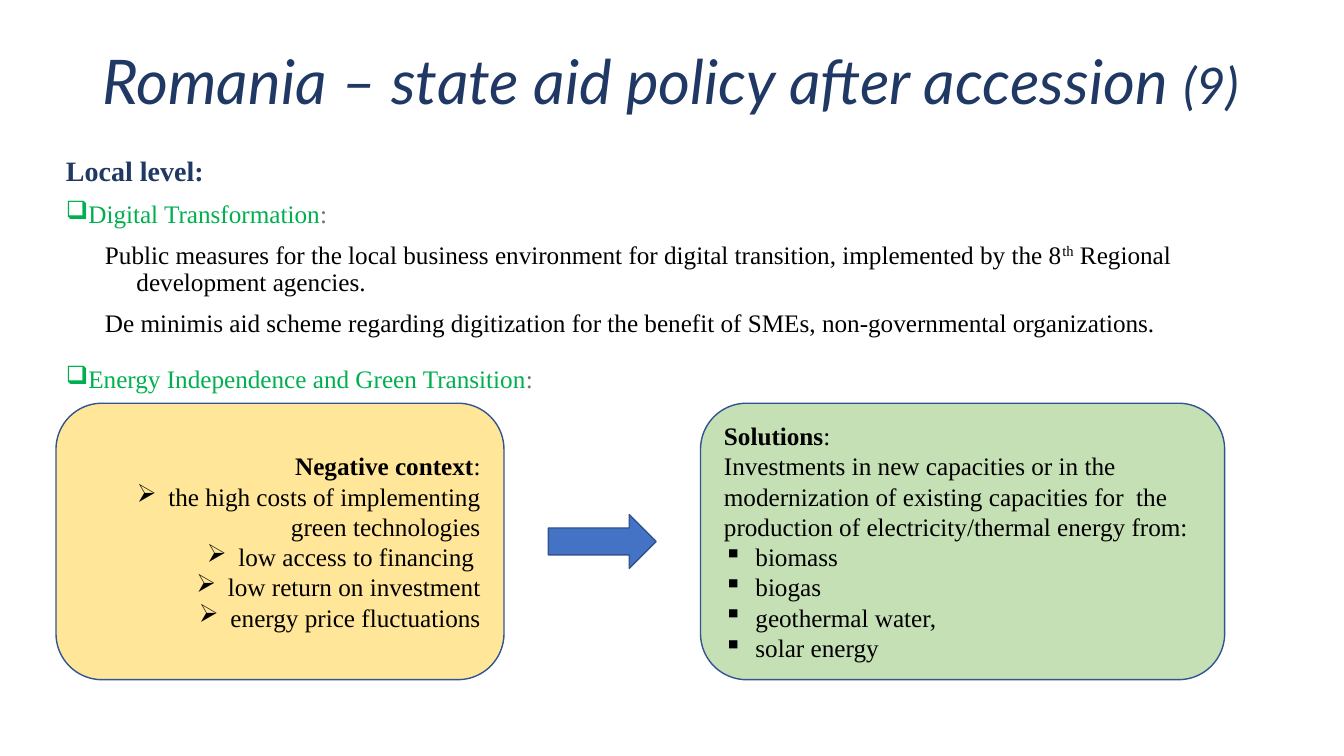
from dataclasses import dataclass

from lxml import etree
from pptx import Presentation
from pptx.dml.color import RGBColor
from pptx.enum.shapes import MSO_SHAPE
from pptx.enum.text import MSO_ANCHOR, MSO_AUTO_SIZE, PP_ALIGN
from pptx.oxml.ns import qn
from pptx.util import Pt

ROUNDED = MSO_SHAPE.ROUNDED_RECTANGLE
RIGHT_ARROW = MSO_SHAPE.RIGHT_ARROW
MIDDLE = MSO_ANCHOR.MIDDLE
LEFT, RIGHT = PP_ALIGN.LEFT, PP_ALIGN.RIGHT
NO_AUTOFIT = MSO_AUTO_SIZE.NONE
TITLE_ONLY = 5


@dataclass(frozen=True)
class Theme:
    title_font: str = "Lato"
    body_font: str = "Times New Roman"
    title_size: int = 44
    number_size: int = 36
    heading_size: int = 20
    body_size: int = 18
    navy: str = "203864"
    green: str = "00B050"
    grey: str = "767171"
    black: str = "000000"
    context_fill: str = "FFE699"
    solutions_fill: str = "C5E0B4"
    arrow_fill: str = "4472C4"
    outline: str = "325491"


THEME = Theme()
HANGING = 22.5
BODY = {"name": THEME.body_font, "size": THEME.body_size, "color": THEME.black}
BOLD = {"bold": True}
GREEN = {"color": THEME.green}
GREY = {"color": THEME.grey}
MEASURE = {"indent": 50.4, "hanging": HANGING}

LOCAL_LEVEL = [
    ([("Local level:", {"size": THEME.heading_size, "color": THEME.navy, "bold": True})],
     {"space_before": 0}),
    ([("Digital Transformation", GREEN), (":", GREY)], {"bullet": "❑"}),
    ([("Public measures for the local business environment for digital transition, "
       "implemented by the 8", {}),
      ("th", {"superscript": True}),
      (" Regional development agencies.", {})], MEASURE),
    ([("De minimis aid scheme regarding digitization for the benefit of SMEs, "
       "non-governmental organizations.", {})], MEASURE),
    ([("Energy Independence and Green Transition", GREEN), (":", GREY)],
     {"bullet": "❑", "space_before": 20}),
]
NEGATIVE_CONTEXT = [
    "the high costs of implementing green technologies",
    "low access to financing ",
    "low return on investment",
    "energy price fluctuations",
]
INVESTMENTS = ("Investments in new capacities or in the modernization of existing capacities "
               "for  the production of electricity/thermal energy from:")
ENERGY_SOURCES = ["biomass", "biogas", "geothermal water,", "solar energy"]


def add_run(paragraph, text, style):
    run = paragraph.add_run()
    run.text = text
    for attribute, value in style.items():
        if attribute == "color":
            run.font.color.rgb = RGBColor.from_string(value)
        elif attribute == "superscript":
            run._r.get_or_add_rPr().set("baseline", "30000")
        else:
            setattr(run.font, attribute, Pt(value) if attribute == "size" else value)


def format_paragraph(paragraph, bullet=None, indent=0, hanging=0, **settings):
    properties = paragraph._p.get_or_add_pPr()
    properties.set("marL", str(Pt(indent)))
    properties.set("indent", str(-Pt(hanging)))
    if bullet:
        etree.SubElement(properties, qn("a:buChar"), char=bullet)
    else:
        etree.SubElement(properties, qn("a:buNone"))
    for attribute, value in settings.items():
        setattr(paragraph, attribute, Pt(value) if attribute == "space_before" else value)


def write_paragraphs(frame, paragraphs, **common):
    """Fill the frame with (runs, settings) pairs that share the common settings."""
    frame.word_wrap = True
    for index, (runs, settings) in enumerate(paragraphs):
        paragraph = frame.paragraphs[0] if index == 0 else frame.add_paragraph()
        format_paragraph(paragraph, **{**common, **settings})
        for text, style in runs:
            add_run(paragraph, text, {**BODY, **style})


def add_outlined(slide, preset, fill, left, top, width, height):
    shape = slide.shapes.add_shape(preset, Pt(left), Pt(top), Pt(width), Pt(height))
    shape.shadow.inherit = False
    shape.fill.solid()
    shape.fill.fore_color.rgb = RGBColor.from_string(fill)
    shape.line.color.rgb = RGBColor.from_string(THEME.outline)
    shape.line.width = Pt(1)
    return shape


def place_title(slide, left, top, width, height):
    title = slide.shapes.title
    title.left, title.top, title.width, title.height = map(Pt, (left, top, width, height))
    frame = title.text_frame
    frame.auto_size = NO_AUTOFIT
    frame.vertical_anchor = MIDDLE
    heading = {"name": THEME.title_font, "size": THEME.title_size,
               "color": THEME.navy, "italic": True}
    write_paragraphs(frame, [([
        ("Romania – state aid policy after accession ", heading),
        ("(9)", {**heading, "size": THEME.number_size}),
    ], {})], alignment=LEFT, line_spacing=0.9, space_before=0)


def add_local_level(slide, left, top, width, height):
    box = slide.shapes.add_textbox(Pt(left), Pt(top), Pt(width), Pt(height))
    write_paragraphs(box.text_frame, LOCAL_LEVEL, line_spacing=0.9, space_before=10)


def add_card(slide, box, fill, heading, intro, bullet, points, alignment):
    frame = add_outlined(slide, ROUNDED, fill, *box).text_frame
    frame.vertical_anchor = MIDDLE
    listed = {"bullet": bullet, "indent": HANGING, "hanging": HANGING}
    paragraphs = [([(heading, BOLD), (":", {})], {})]
    paragraphs += [([(text, {})], {}) for text in intro]
    paragraphs += [([(point, {})], listed) for point in points]
    write_paragraphs(frame, paragraphs, alignment=alignment)


def add_energy_flow(slide, left, top, width, height):
    """Negative context, an arrow centred in the gap, and the solutions."""
    context_width, solutions_width = 320, 374.4
    arrow_width, arrow_height = 77, 38.4
    gap = width - context_width - solutions_width
    add_card(slide, (left, top, context_width, height), THEME.context_fill,
             "Negative context", [], "➢", NEGATIVE_CONTEXT, RIGHT)
    add_card(slide, (left + width - solutions_width, top, solutions_width, height),
             THEME.solutions_fill, "Solutions", [INVESTMENTS], "▪", ENERGY_SOURCES, LEFT)
    add_outlined(slide, RIGHT_ARROW, THEME.arrow_fill,
                 left + context_width + (gap - arrow_width) / 2,
                 top + (height - arrow_height) / 2, arrow_width, arrow_height)


def main():
    presentation = Presentation()
    presentation.slide_width, presentation.slide_height = Pt(960), Pt(540)
    slide = presentation.slides.add_slide(presentation.slide_layouts[TITLE_ONLY])
    place_title(slide, 66, 28.8, 829, 63.4)
    add_local_level(slide, 40, 108.7, 888, 408)
    add_energy_flow(slide, 40, 288, 834.8, 197.5)
    presentation.save("out.pptx")


if __name__ == "__main__":
    main()
